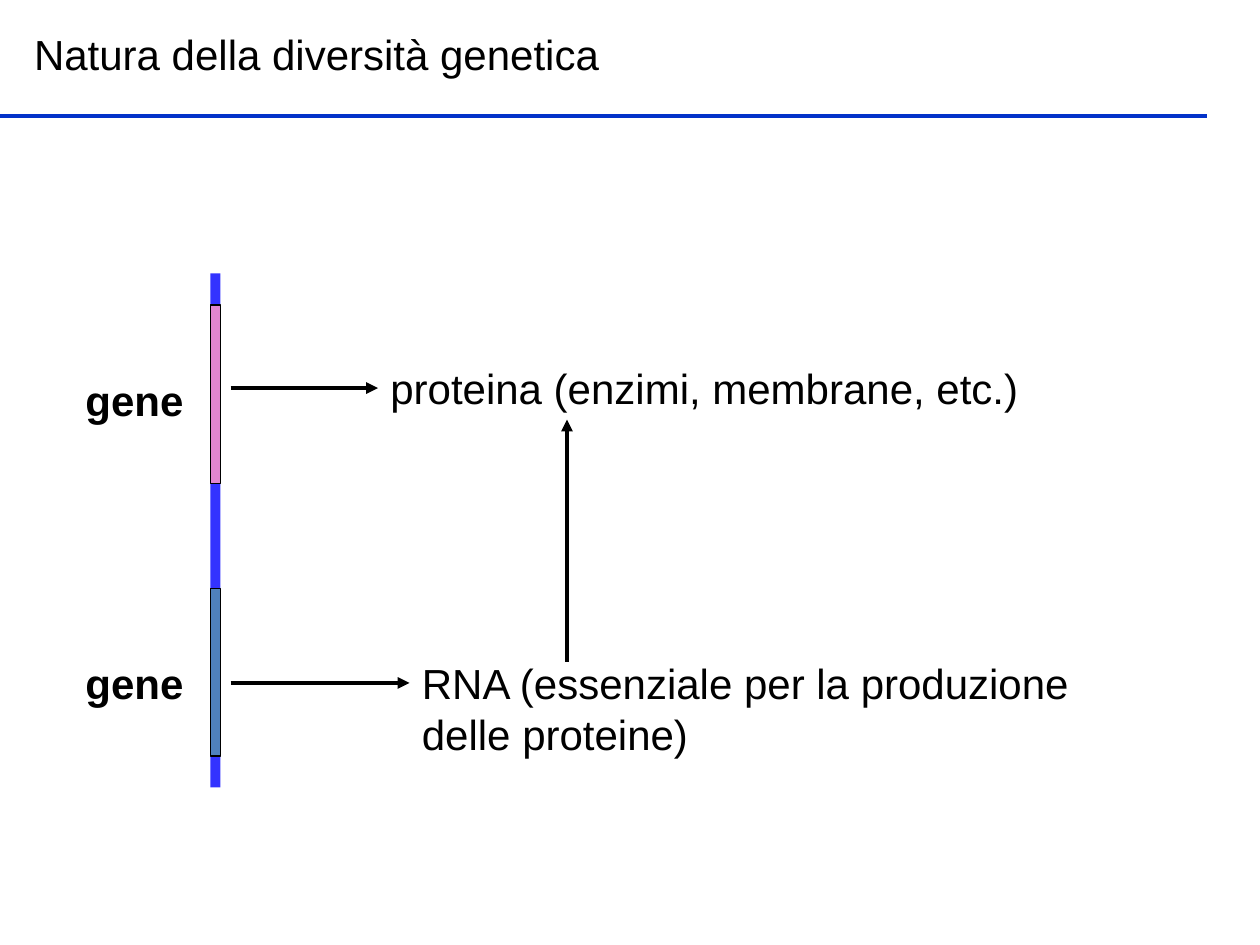
from lxml import etree
from pptx import Presentation
from pptx.dml.color import RGBColor
from pptx.enum.shapes import MSO_CONNECTOR, MSO_SHAPE
from pptx.enum.text import MSO_ANCHOR, MSO_AUTO_SIZE, PP_ALIGN
from pptx.oxml.ns import qn
from pptx.util import Inches, Pt

STRAIGHT = MSO_CONNECTOR.STRAIGHT
RECTANGLE = MSO_SHAPE.RECTANGLE
MIDDLE = MSO_ANCHOR.MIDDLE
LEFT = PP_ALIGN.LEFT
GROW = MSO_AUTO_SIZE.SHAPE_TO_FIT_TEXT
LEFT_SIDE = 1

COLORS = {
    "text": "000000",
    "rule": "0332C9",
    "strand": "3333FF",
    "protein_gene": "E286D0",
    "rna_gene": "4F81BD",
}


def color(name):
    return RGBColor.from_string(COLORS[name])


def format_text(frame, lines, bold=False):
    frame.text = "\n".join(lines)
    for para in frame.paragraphs:
        para.alignment = LEFT
        para.font.name = "Arial"
        para.font.size = Pt(24)
        para.font.bold = bold
        para.font.color.rgb = color("text")


def add_label(page, box, lines, bold=False):
    label = page.shapes.add_textbox(*map(Inches, box))
    label.text_frame.word_wrap = False
    label.text_frame.auto_size = GROW
    format_text(label.text_frame, lines, bold)
    return label


def add_bar(page, box, fill, outlined=True):
    bar = page.shapes.add_shape(RECTANGLE, *map(Inches, box))
    bar.shadow.inherit = False
    bar.fill.solid()
    bar.fill.fore_color.rgb = color(fill)
    if outlined:
        bar.line.color.rgb = color("text")
        bar.line.width = Pt(0.75)
    else:
        bar.line.fill.background()


def add_line(page, start, end, line_color, width, arrow=False):
    line = page.shapes.add_connector(STRAIGHT, *map(Inches, start + end))
    line.line.color.rgb = color(line_color)
    line.line.width = Pt(width)
    if arrow:
        etree.SubElement(line.line._get_or_add_ln(), qn("a:tailEnd"), type="triangle")
    etree.SubElement(line._element.spPr, qn("a:effectLst"))
    return line


def add_header(page, box):
    """Title with the rule below it."""
    left, top, width, height = box
    title = page.shapes.title
    title.left, title.top = Inches(left), Inches(top)
    title.width, title.height = Inches(width), Inches(height)
    frame = title.text_frame
    format_text(frame, ["Natura della diversità genetica"])
    frame.word_wrap = True
    frame.auto_size = GROW
    frame.vertical_anchor = MIDDLE
    add_line(page, (0, 0.92), (9.58, 0.92), "rule", 2)


def add_gene_diagram(page, box):
    """DNA strand with two genes, their products and the arrows between."""
    left, top, width, height = box
    strand_left = left + 1.09
    strand_width = 0.08
    arrow_left = left + 1.25
    add_bar(page, (strand_left, top, strand_width, height), "strand", outlined=False)

    # Gene: fill, top and height of its bar, top of its label
    genes = [
        ("protein_gene", 0.25, 1.42, 0.75),
        ("rna_gene", 2.5, 1.33, 3),
    ]
    for fill, bar_top, bar_height, label_top in genes:
        add_bar(page, (strand_left, top + bar_top, strand_width, bar_height), fill)
        add_label(page, (left, top + label_top, 0.99, 0.5), ["gene"], bold=True)

    # Products
    protein_left, rna_left = left + 2.42, left + 2.67
    protein = add_label(page, (protein_left, top + 0.66, 5.24, 0.5),
                        ["proteina (enzimi, membrane, etc.)"])
    add_label(page, (rna_left, top + 3, width - 2.67, 0.91),
              ["RNA (essenziale per la produzione", "delle proteine)"])

    # Arrows: gene to protein, gene to RNA, RNA to protein
    protein_y, rna_y, rise_x = top + 0.91, top + 3.25, left + 3.92
    to_protein = add_line(page, (arrow_left, protein_y), (protein_left, protein_y),
                          "text", 2.25, arrow=True)
    to_protein.end_connect(protein, LEFT_SIDE)
    add_line(page, (arrow_left, rna_y), (rna_left, rna_y), "text", 2.25, arrow=True)
    add_line(page, (rise_x, top + 3.08), (rise_x, top + 1.16), "text", 2.25, arrow=True)


def main():
    deck = Presentation()
    deck.slide_width, deck.slide_height = Inches(10), Inches(7.5)
    page = deck.slides.add_slide(deck.slide_layouts.get_by_name("Title Only"))
    add_header(page, (0.17, 0.18, 8.5, 0.5))
    add_gene_diagram(page, (0.58, 2.17, 8.06, 4.08))
    deck.save("out.pptx")


if __name__ == "__main__":
    main()
